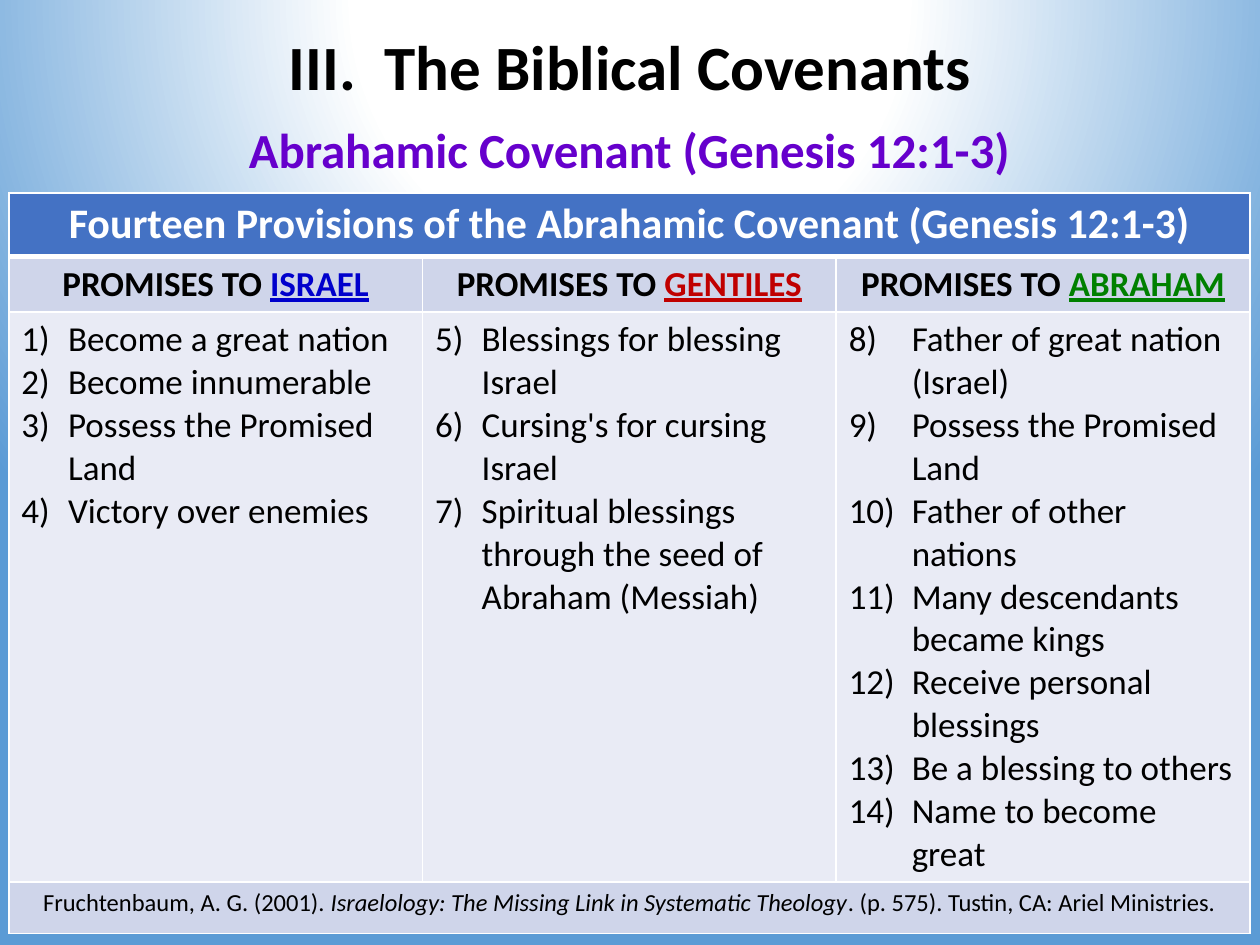
from pptx import Presentation
from pptx.dml.color import RGBColor
from pptx.enum.text import MSO_ANCHOR, PP_ALIGN
from pptx.oxml import parse_xml
from pptx.oxml.ns import nsdecls, qn
from pptx.util import Inches, Pt

HEADS = [("ISRAEL", "0000CC"), ("GENTILES", "C00000"), ("ABRAHAM", "008000")]
LISTS = [
    (1, 0.37, ["Become a great nation", "Become innumerable",
               "Possess the Promised Land", "Victory over enemies"]),
    (5, 0.37, ["Blessings for blessing Israel", "Cursing's for cursing Israel",
               "Spiritual blessings through the seed of Abraham (Messiah)"]),
    (8, 0.5, ["Father of great nation (Israel)", "Possess the Promised Land",
              "Father of other nations", "Many descendants became kings",
              "Receive personal blessings", "Be a blessing to others",
              "Name to become great"]),
]
SOURCE = [("Fruchtenbaum, A. G. (2001). ", False),
          ("Israelology: The Missing Link in Systematic Theology", True),
          (". (p. 575). Tustin, CA: Ariel Ministries.", False)]


def color(text):
    """Turn a hex string into a colour."""
    return RGBColor.from_string(text)


def style(para, size, tint, bold=False, align=PP_ALIGN.CENTER):
    """Set the font and alignment of a paragraph."""
    para.alignment = align
    font = para.font
    font.name, font.size, font.bold = "Calibri", Pt(size), bold
    font.color.rgb = color(tint)


def number(para, kind, start, indent):
    """Give a paragraph an automatic number and a hanging indent."""
    props = para._p.get_or_add_pPr()
    props.set("marL", str(Inches(indent)))
    props.set("indent", str(-Inches(indent)))
    props.append(parse_xml(
        f'<a:buAutoNum {nsdecls("a")} type="{kind}" startAt="{start}"/>'))


def paint(cell, fill, top=1, bottom=1):
    """Fill a cell and draw its white borders."""
    cell.fill.solid()
    cell.fill.fore_color.rgb = color(fill)
    props = cell._tc.get_or_add_tcPr()
    sides = [("L", 1), ("R", 1), ("T", top), ("B", bottom)]
    for spot, (side, width) in enumerate(sides):
        props.insert(spot, parse_xml(
            f'<a:ln{side} {nsdecls("a")} w="{Pt(width)}"><a:solidFill>'
            f'<a:srgbClr val="FFFFFF"/></a:solidFill></a:ln{side}>'))


def backdrop(slide):
    """Spread a round white and blue gradient behind the slide."""
    slide.background.fill.solid()
    props = slide._element.find(".//" + qn("p:bgPr"))
    stops = "".join(
        f'<a:gs pos="{spot * 1000}"><a:srgbClr val="{tint}"/></a:gs>'
        for spot, tint in [(0, "FFFFFF"), (35, "FFFFFF"), (100, "5B9BD5")])
    props.replace(props[0], parse_xml(
        f'<a:gradFill {nsdecls("a")} rotWithShape="1"><a:gsLst>{stops}</a:gsLst>'
        '<a:path path="circle"><a:fillToRect l="50000" t="-80000" '
        'r="50000" b="180000"/></a:path></a:gradFill>'))


def heading(slide, box, text, size, tint, roman=None):
    """Place a bold centred line, with a Roman number if one is given."""
    frame = slide.shapes.add_textbox(*map(Inches, box)).text_frame
    frame.word_wrap = True
    para = frame.paragraphs[0]
    para.text = text
    if roman:
        frame.vertical_anchor = MSO_ANCHOR.MIDDLE
        para.line_spacing = 0.9
        number(para, "romanUcPeriod", roman, 0.76)
    style(para, size, tint, True)


def promises(slide, box):
    """Place the table of provisions."""
    table = slide.shapes.add_table(4, 3, *map(Inches, box)).table
    for col in table.columns:
        col.width = Inches(box[2] / 3)
    for row, high in zip(table.rows, [0.5, 0.44, box[3] - 1.35, 0.41]):
        row.height = Inches(high)
    for line, fill in enumerate(["4472C4", "CFD5EA", "E9EBF5", "CFD5EA"]):
        for cell in table.rows[line].cells:
            paint(cell, fill, 3 if line == 1 else 1, 3 if line == 0 else 1)
    for line in (0, 3):
        table.cell(line, 0).merge(table.cell(line, 2))

    para = table.cell(0, 0).text_frame.paragraphs[0]
    para.text = "Fourteen Provisions of the Abrahamic Covenant (Genesis 12:1-3)"
    style(para, 24, "FFFFFF", True)

    for col, (name, tint) in enumerate(HEADS):
        para = table.cell(1, col).text_frame.paragraphs[0]
        para.add_run().text = "PROMISES TO "
        run = para.add_run()
        run.text = name
        run.font.underline = True
        run.font.color.rgb = color(tint)
        style(para, 20, "000000", True)

    for col, (start, indent, items) in enumerate(LISTS):
        frame = table.cell(2, col).text_frame
        for spot, item in enumerate(items):
            para = frame.add_paragraph() if spot else frame.paragraphs[0]
            para.text = item
            number(para, "arabicParenR", start, indent)
            style(para, 20, "000000", align=PP_ALIGN.LEFT)

    para = table.cell(3, 0).text_frame.paragraphs[0]
    for text, slant in SOURCE:
        run = para.add_run()
        run.text, run.font.italic = text, slant
    style(para, 14, "000000")


def main():
    """Build and save the slide."""
    deck = Presentation()
    deck.slide_width, deck.slide_height = Inches(10), Inches(7.5)
    slide = deck.slides.add_slide(deck.slide_layouts[6])
    backdrop(slide)
    promises(slide, (0.07, 1.53, 9.85, 5.87))
    heading(slide, (1.86, 0.9, 6.27, 0.57),
            "Abrahamic Covenant (Genesis 12:1-3)", 28, "6600CC")
    heading(slide, (1.25, 0.22, 7.5, 0.68),
            "The Biblical Covenants", 36, "000000", roman=3)
    deck.save("out.pptx")


if __name__ == "__main__":
    main()
